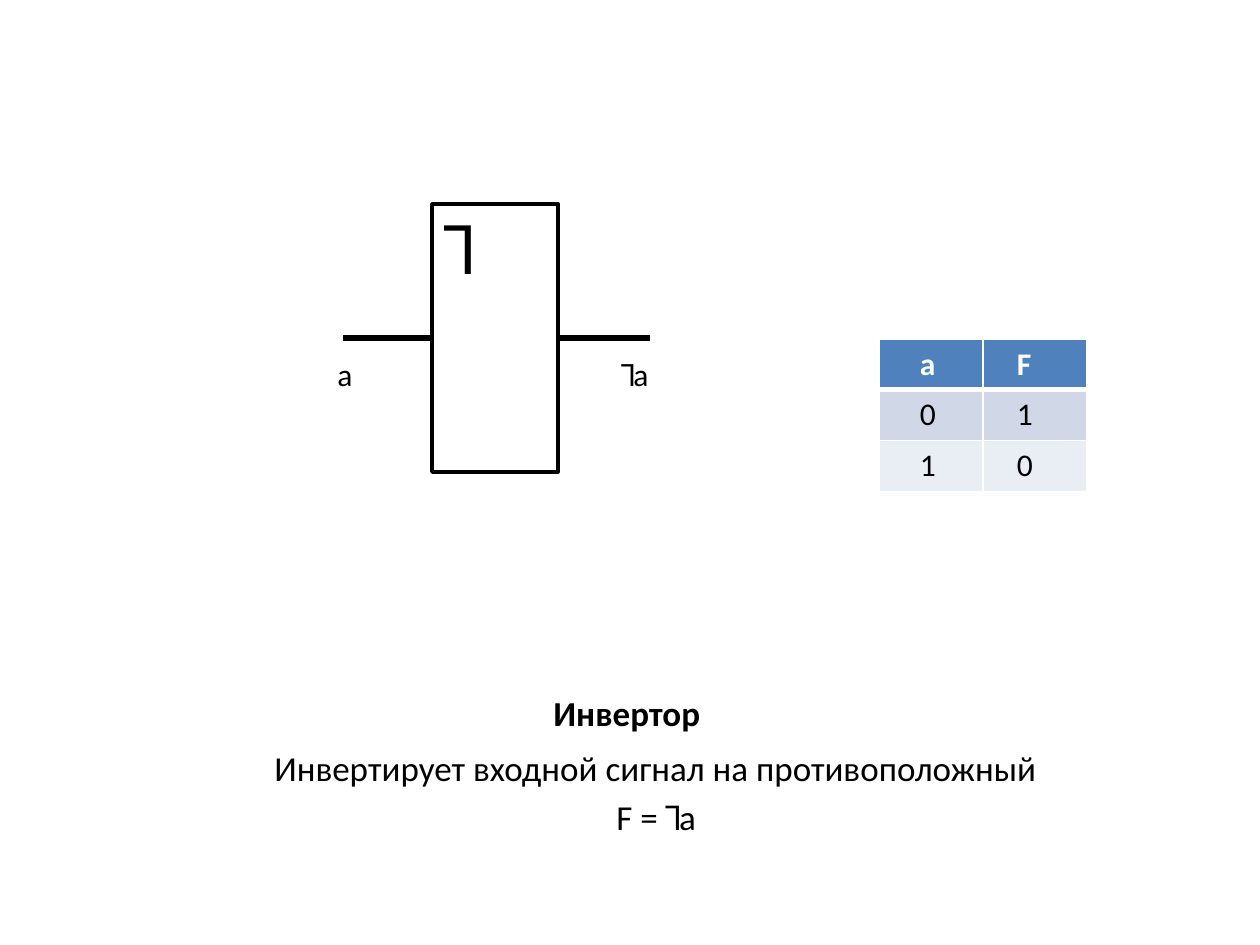
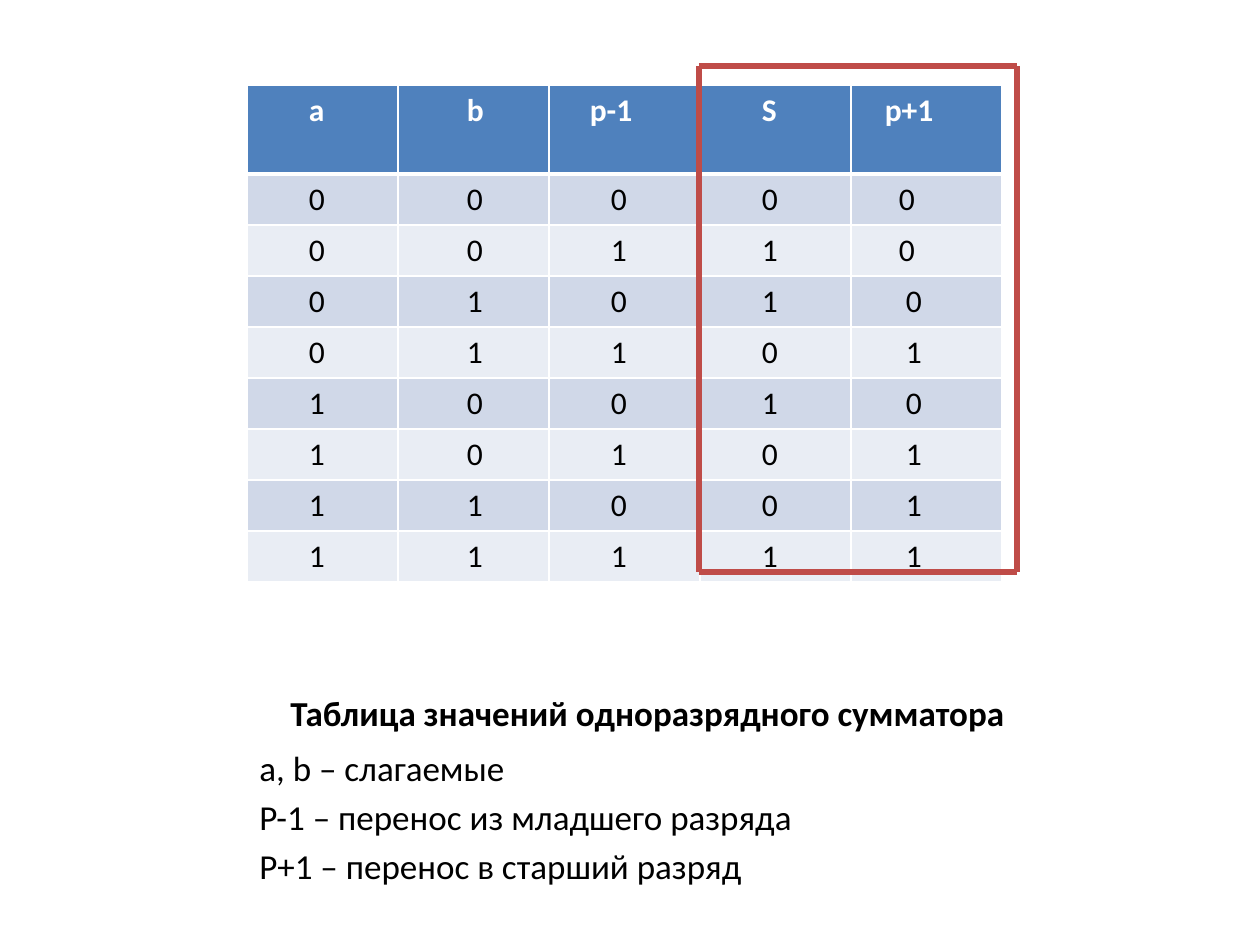
from dataclasses import dataclass, field
from itertools import pairwise

from lxml import etree
from pptx import Presentation
from pptx.dml.color import RGBColor
from pptx.enum.shapes import MSO_CONNECTOR, MSO_SHAPE
from pptx.enum.text import MSO_ANCHOR, PP_ALIGN
from pptx.oxml.ns import qn
from pptx.shapes.autoshape import Shape
from pptx.shapes.connector import Connector
from pptx.slide import Slide
from pptx.table import _Cell
from pptx.text.text import TextFrame
from pptx.util import Emu, Pt

STRAIGHT = MSO_CONNECTOR.STRAIGHT
RECTANGLE = MSO_SHAPE.RECTANGLE
TOP, BOTTOM = MSO_ANCHOR.TOP, MSO_ANCHOR.BOTTOM
LEFT = PP_ALIGN.LEFT

BLACK = RGBColor(0x00, 0x00, 0x00)
WHITE = RGBColor(0xFF, 0xFF, 0xFF)
HEADER_BLUE = RGBColor(0x4F, 0x81, 0xBD)
BANDS = (RGBColor(0xD0, 0xD8, 0xE8), RGBColor(0xE9, 0xED, 0xF4))
OUTPUT_RED = RGBColor(0xBF, 0x4C, 0x48)

FONT = "Calibri"
PX_PER_INCH = 126
TITLE_TOP, TITLE_HEIGHT = 662, 78
BODY_TOP, BODY_HEIGHT = 740, 111
ROW_HEIGHT = 51
LEFT_SIDE, RIGHT_SIDE = 1, 3


@dataclass
class Line:
    text: str
    indent: int = 0
    size: int = 20
    bold: bool = False


@dataclass
class TextBlock:
    left: int
    top: int
    width: int
    height: int
    lines: list[Line]
    anchor: MSO_ANCHOR = TOP


@dataclass
class TruthTable:
    left: int
    top: int
    column_width: int
    header_height: int
    rows: list[str]
    header_indents: tuple[int, ...]
    value_indents: tuple[int, ...]
    special_indents: dict[tuple[int, int], int] = field(default_factory=dict)


def px(length: int) -> Emu:
    return Emu(round(length * 914400 / PX_PER_INCH))


def write_lines(frame: TextFrame, lines: list[Line], color: RGBColor = BLACK) -> None:
    for number, line in enumerate(lines):
        paragraph = frame.add_paragraph() if number else frame.paragraphs[0]
        paragraph.alignment = LEFT
        if number:
            paragraph.space_before = Pt(4)
        if line.indent:
            paragraph._p.get_or_add_pPr().set("marL", str(px(line.indent)))
        run = paragraph.add_run()
        run.text = line.text
        run.font.name = FONT
        run.font.size = Pt(line.size)
        run.font.bold = line.bold
        run.font.color.rgb = color


def draw_text(slide: Slide, block: TextBlock) -> None:
    box = slide.shapes.add_textbox(
        px(block.left), px(block.top), px(block.width), px(block.height)
    )
    box.text_frame.word_wrap = True
    box.text_frame.vertical_anchor = block.anchor
    write_lines(box.text_frame, block.lines)


def draw_title(slide: Slide, left: int, width: int, text: str, indent: int) -> None:
    line = Line(text, indent, bold=True)
    draw_text(slide, TextBlock(left, TITLE_TOP, width, TITLE_HEIGHT, [line], BOTTOM))


def draw_body(slide: Slide, left: int, width: int, lines: list[Line]) -> None:
    draw_text(slide, TextBlock(left, BODY_TOP, width, BODY_HEIGHT, lines))


def draw_line(
    slide: Slide, start: tuple[int, int], end: tuple[int, int], color: RGBColor
) -> Connector:
    line = slide.shapes.add_connector(STRAIGHT, *map(px, start + end))
    line.line.color.rgb = color
    line.line.width = Pt(3)
    etree.SubElement(line._element.spPr, qn("a:effectLst"))
    return line


def border_cell(cell: _Cell, bottom_width: int) -> None:
    properties = cell._tc.get_or_add_tcPr()
    widths = {"lnL": 1, "lnR": 1, "lnT": 1, "lnB": bottom_width}
    for position, (side, width) in enumerate(widths.items()):
        border = etree.Element(qn(f"a:{side}"), w=str(Pt(width)))
        fill = etree.SubElement(border, qn("a:solidFill"))
        etree.SubElement(fill, qn("a:srgbClr"), val=str(WHITE))
        properties.insert(position, border)


def draw_truth_table(slide: Slide, spec: TruthTable) -> None:
    values = [row.split() for row in spec.rows]
    columns = len(values[0])
    table = slide.shapes.add_table(
        len(values), columns, px(spec.left), px(spec.top),
        px(spec.column_width * columns),
        px(spec.header_height + ROW_HEIGHT * (len(values) - 1)),
    ).table
    for column in table.columns:
        column.width = px(spec.column_width)
    for r, row in enumerate(values):
        is_header = r == 0
        table.rows[r].height = px(spec.header_height if is_header else ROW_HEIGHT)
        indents = spec.header_indents if is_header else spec.value_indents
        for c, value in enumerate(row):
            cell = table.cell(r, c)
            cell.margin_left = px(spec.special_indents.get((r, c), indents[c]))
            cell.fill.solid()
            cell.fill.fore_color.rgb = HEADER_BLUE if is_header else BANDS[(r - 1) % 2]
            border_cell(cell, 3 if is_header else 1)
            write_lines(
                cell.text_frame,
                [Line(value, size=18, bold=is_header)],
                WHITE if is_header else BLACK,
            )


def draw_gate(slide: Slide, left: int, top: int, width: int, height: int) -> Shape:
    gate = slide.shapes.add_shape(RECTANGLE, px(left), px(top), px(width), px(height))
    gate.shadow.inherit = False
    gate.fill.solid()
    gate.fill.fore_color.rgb = WHITE
    gate.line.color.rgb = BLACK
    gate.line.width = Pt(2)
    gate.text_frame.vertical_anchor = TOP
    gate.text_frame.margin_top = px(1)
    write_lines(gate.text_frame, [Line("˥", size=40)])
    return gate


def build_inverter(slide: Slide) -> None:
    draw_title(slide, 247, 756, "Инвертор", 294)
    draw_truth_table(
        slide, TruthTable(879, 339, 104, 50, ["a F", "0 1", "1 0"], (41, 34), (41, 34))
    )
    draw_body(slide, 144, 1022, [
        Line("Инвертирует входной сигнал на противоположный", 118),
        Line("F = ˥a", 460),
    ])
    gate = draw_gate(slide, 432, 204, 126, 268)
    input_wire = draw_line(slide, (343, 338), (432, 338), BLACK)
    input_wire.end_connect(gate, LEFT_SIDE)
    output_wire = draw_line(slide, (558, 338), (650, 338), BLACK)
    output_wire.begin_connect(gate, RIGHT_SIDE)
    for left, signal in ((325, "a"), (609, "˥a")):
        draw_text(slide, TextBlock(left, 349, 70, 51, [Line(signal, size=18)]))


def build_adder(slide: Slide) -> None:
    draw_title(slide, 105, 992, "Таблица значений одноразрядного сумматора", 173)
    draw_truth_table(slide, TruthTable(
        247, 85, 151, 89,
        [
            "a b p-1 S p+1",
            "0 0 0 0 0",
            "0 0 1 1 0",
            "0 1 0 1 0",
            "0 1 1 0 1",
            "1 0 0 1 0",
            "1 0 1 0 1",
            "1 1 0 0 1",
            "1 1 1 1 1",
        ],
        (62, 69, 41, 62, 34),
        (62, 69, 62, 62, 55),
        {(1, 4): 48, (2, 4): 48},
    ))
    draw_body(slide, 247, 756, [
        Line("a, b – слагаемые"),
        Line("P-1 – перенос из младшего разряда"),
        Line("P+1 – перенос в старший разряд"),
    ])
    left, top, right, bottom = 699, 66, 1017, 572
    corners = [(left, top), (right, top), (right, bottom), (left, bottom), (left, top)]
    for start, end in pairwise(corners):
        draw_line(slide, start, end, OUTPUT_RED)


def main() -> None:
    deck = Presentation()
    deck.slide_width, deck.slide_height = px(1260), px(945)
    blank = deck.slide_layouts[6]
    for build in (build_inverter, build_adder):
        build(deck.slides.add_slide(blank))
    deck.save("out.pptx")


if __name__ == "__main__":
    main()
